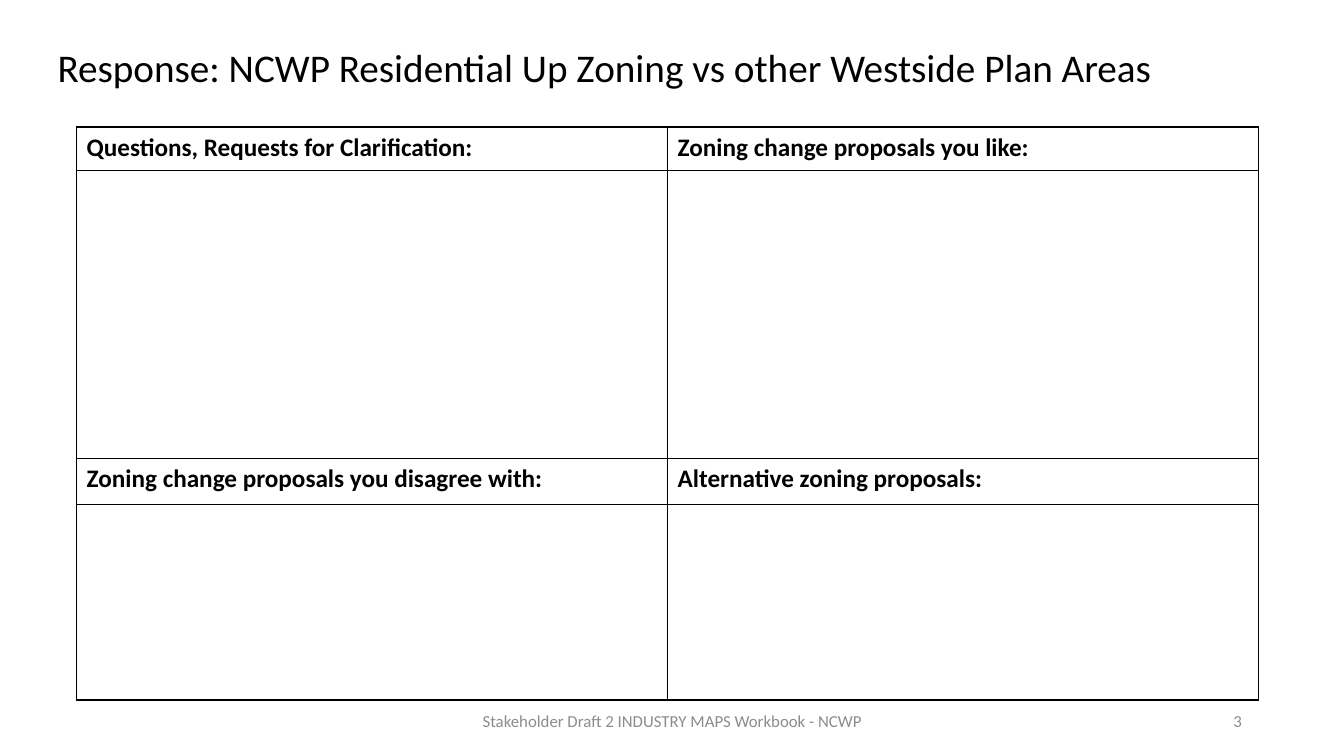
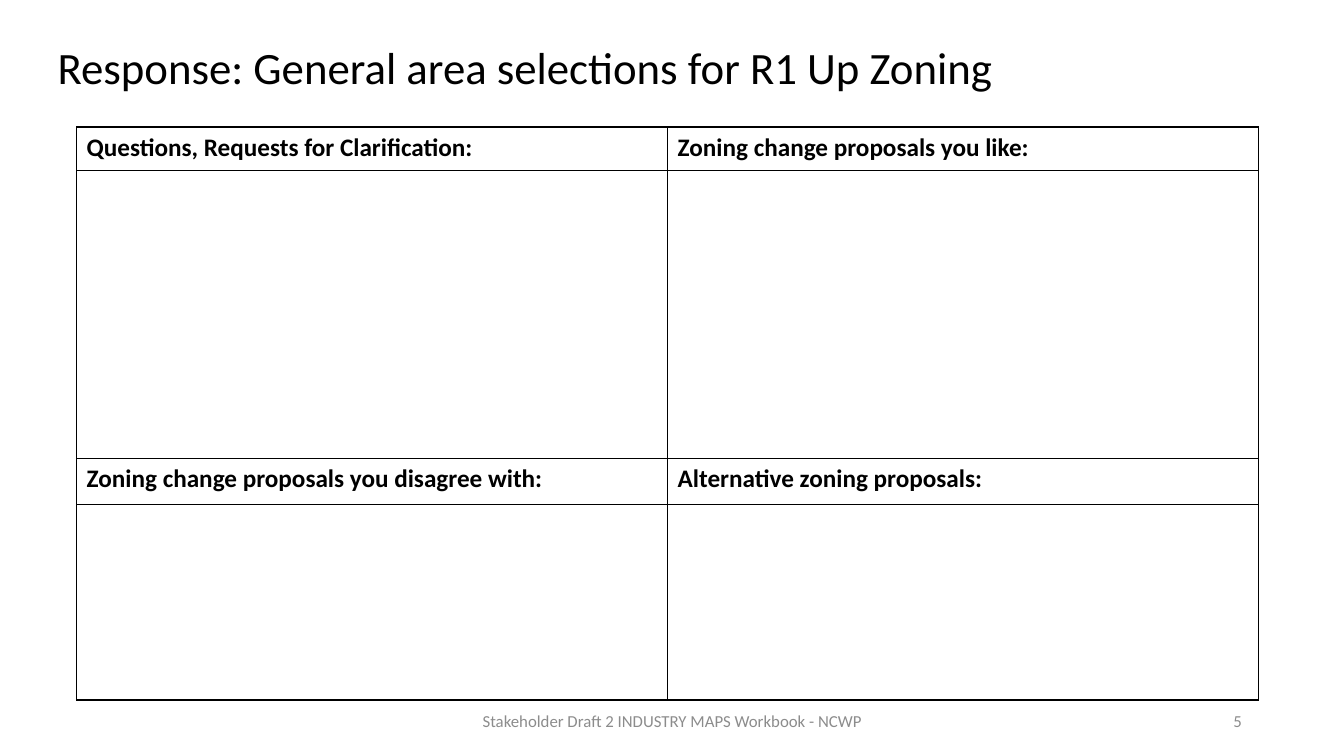
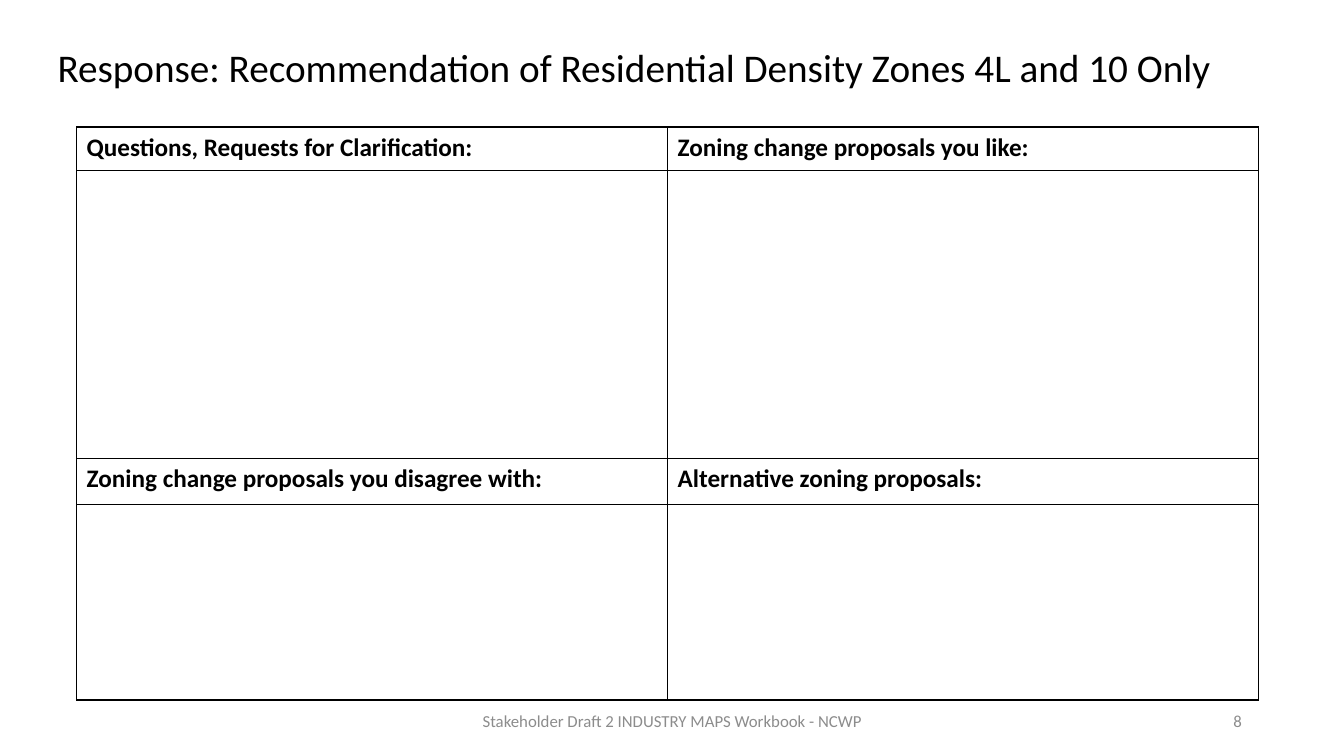
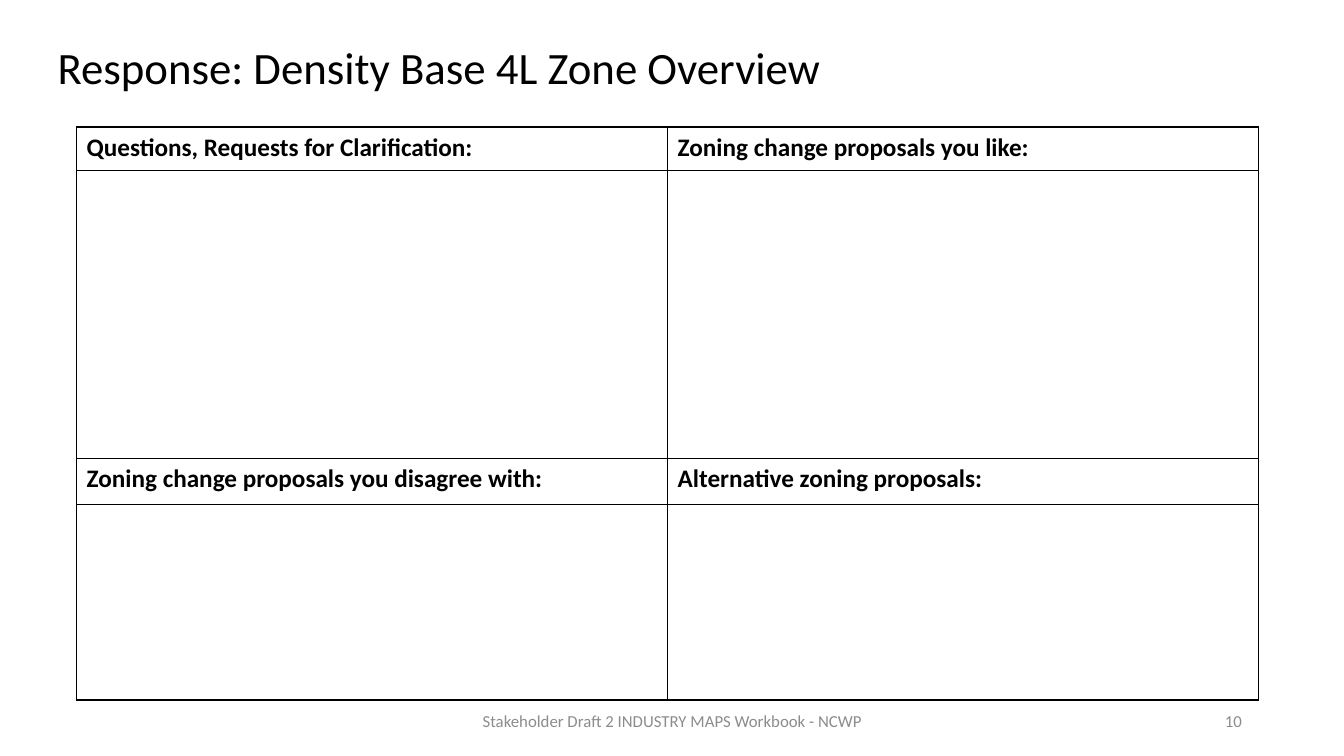
from lxml import etree
from pptx import Presentation
from pptx import util as u
from pptx.dml.color import RGBColor
from pptx.enum import text
from pptx.oxml import ns

BLACK = RGBColor(0x00, 0x00, 0x00)
GRAY = RGBColor(0x8C, 0x8C, 0x8C)
FONT = "Calibri"
SLIDE_WIDTH, SLIDE_HEIGHT = u.Inches(13.33), u.Inches(7.5)

# Boxes are left, top, width and height in percent of the slide.
TITLE_BOX = (3.53, 5.33, 89.65, 7.87)
RESPONSE_BOX = (5.7, 16.8, 87.95, 75.8)
FOOTER_BOX = (33.15, 92.67, 33.75, 5.33)
NUMBER_BOX = (70.65, 92.67, 22.5, 5.33)

FOOTER = "Stakeholder Draft 2 INDUSTRY MAPS Workbook - NCWP"
PROMPTS = (
    ("Questions, Requests for Clarification:", "Zoning change proposals you like:"),
    ("", ""),
    ("Zoning change proposals you disagree with:", "Alternative zoning proposals:"),
    ("", ""),
)
ROW_WEIGHTS = (0.43, 2.86, 0.45, 1.94)
RESPONSES = (
    ("Response: NCWP Residential Up Zoning vs other Westside Plan Areas", 28, 3),
    ("Response: General area selections for R1 Up Zoning", 32, 5),
    ("Response: Recommendation of Residential Density Zones 4L and 10 Only", 28, 8),
    ("Response: Density Base 4L Zone Overview", 32, 10),
)


def place(box):
    """Turn a box in percent of the slide into lengths."""
    sides = (SLIDE_WIDTH, SLIDE_HEIGHT) * 2
    return [int(side * share / 100) for side, share in zip(sides, box)]


def write(frame, words, size, color, align=text.PP_ALIGN.LEFT, bold=False):
    """Set one formatted paragraph in a text frame."""
    frame.text = words
    paragraph = frame.paragraphs[0]
    paragraph.alignment = align
    font = paragraph.font if not words else paragraph.runs[0].font
    font.name, font.size, font.bold = FONT, u.Pt(size), bold
    font.color.rgb = color


def add_title(slide, box, words, size):
    """Move, fill and format the title placeholder."""
    title = slide.shapes.title
    title.left, title.top, title.width, title.height = place(box)
    frame = title.text_frame
    write(frame, words, size, BLACK)
    frame.word_wrap = True
    frame.auto_size = text.MSO_AUTO_SIZE.NONE
    frame.vertical_anchor = text.MSO_ANCHOR.MIDDLE
    frame.paragraphs[0].line_spacing = 0.9


def add_footer_text(slide, box, words, align):
    """Add one gray line at the foot of the slide."""
    frame = slide.shapes.add_textbox(*place(box)).text_frame
    frame.word_wrap = True
    frame.vertical_anchor = text.MSO_ANCHOR.MIDDLE
    write(frame, words, 12, GRAY, align)


def outline(cell):
    """Leave the cell unfilled and draw its four borders."""
    cell.fill.background()
    properties = cell._tc.get_or_add_tcPr()
    for position, side in enumerate(("lnL", "lnR", "lnT", "lnB")):
        border = etree.Element(ns.qn(f"a:{side}"), w=str(u.Pt(1)))
        fill = etree.SubElement(border, ns.qn("a:solidFill"))
        etree.SubElement(fill, ns.qn("a:srgbClr"), val=str(BLACK))
        properties.insert(position, border)


def add_response_table(slide, box):
    """Add the prompts with an empty answer row under each."""
    left, top, width, height = place(box)
    table = slide.shapes.add_table(
        len(PROMPTS), len(PROMPTS[0]), left, top, width, height).table
    table.first_row = table.horz_banding = False
    for row, weight, prompts in zip(table.rows, ROW_WEIGHTS, PROMPTS):
        row.height = int(height * weight / sum(ROW_WEIGHTS))
        for cell, prompt in zip(row.cells, prompts):
            write(cell.text_frame, prompt, 18, BLACK, bold=True)
            outline(cell)


def add_response_slide(deck, heading, size, number):
    """Build one response worksheet."""
    slide = deck.slides.add_slide(deck.slide_layouts.get_by_name("Title Only"))
    add_title(slide, TITLE_BOX, heading, size)
    add_footer_text(slide, FOOTER_BOX, FOOTER, text.PP_ALIGN.CENTER)
    add_footer_text(slide, NUMBER_BOX, str(number), text.PP_ALIGN.RIGHT)
    add_response_table(slide, RESPONSE_BOX)


def main():
    """Build and save the workbook pages."""
    deck = Presentation()
    deck.slide_width, deck.slide_height = SLIDE_WIDTH, SLIDE_HEIGHT
    for heading, size, number in RESPONSES:
        add_response_slide(deck, heading, size, number)
    deck.save("out.pptx")


if __name__ == "__main__":
    main()
